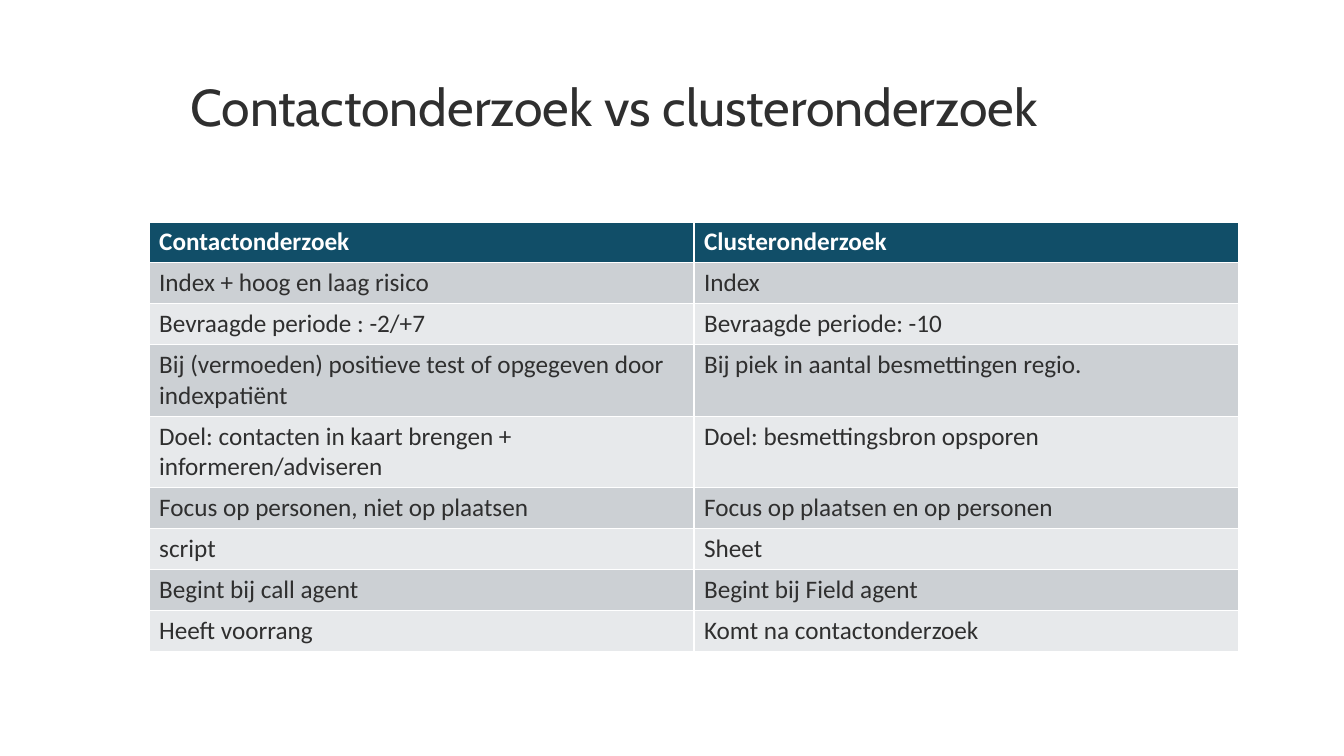
import pptx
import pptx.dml.color
import pptx.enum.text
import pptx.util

Pt = pptx.util.Pt

COLORS = {
    "text": "2F2F2F",
    "header": "114E68",
    "header text": "FFFFFF",
    "odd row": "CCD0D4",
    "even row": "E7E9EB",
}
TITLE = "Contactonderzoek vs clusteronderzoek"
COMPARISON = [
    ("Contactonderzoek", "Clusteronderzoek"),
    ("Index + hoog en laag risico", "Index"),
    ("Bevraagde periode : -2/+7", "Bevraagde periode: -10"),
    ("Bij (vermoeden) positieve test of opgegeven door indexpatiënt",
     "Bij piek in aantal besmettingen regio."),
    ("Doel: contacten in kaart brengen + informeren/adviseren",
     "Doel: besmettingsbron opsporen"),
    ("Focus op personen, niet op plaatsen", "Focus op plaatsen en op personen"),
    ("script", "Sheet"),
    ("Begint bij call agent", "Begint bij Field agent"),
    ("Heeft voorrang", "Komt na contactonderzoek"),
]
ROW_HEIGHT = 29.2


def rgb(name):
    return pptx.dml.color.RGBColor.from_string(COLORS[name])


def format_font(font, color, **values):
    for name, value in values.items():
        setattr(font, name, value)
    font.color.rgb = rgb(color)


def place_title(slide, left, top, width, height):
    title = slide.shapes.title
    box = {"left": left, "top": top, "width": width, "height": height}
    for name, value in box.items():
        setattr(title, name, Pt(value))
    frame = title.text_frame
    frame.text = TITLE
    frame_format = {
        "margin_left": 0, "margin_top": 0, "margin_right": 0, "margin_bottom": 0,
        "word_wrap": True,
        "auto_size": pptx.enum.text.MSO_AUTO_SIZE.NONE,
        "vertical_anchor": pptx.enum.text.MSO_ANCHOR.TOP,
    }
    for name, value in frame_format.items():
        setattr(frame, name, value)
    paragraph = frame.paragraphs[0]
    paragraph.alignment = pptx.enum.text.PP_ALIGN.LEFT
    paragraph.line_spacing = Pt(38)
    format_font(paragraph.runs[0].font, "text", name="Cabin", size=Pt(37), bold=False)


def place_comparison(slide, left, top, width):
    """Add the table; its default style supplies the white cell borders."""
    table = slide.shapes.add_table(
        len(COMPARISON), len(COMPARISON[0]), Pt(left), Pt(top), Pt(width),
        Pt(ROW_HEIGHT * len(COMPARISON))).table
    for row_index, texts in enumerate(COMPARISON):
        is_header = row_index == 0
        fill = "header" if is_header else "odd row" if row_index % 2 else "even row"
        color = "header text" if is_header else "text"
        for column_index, text in enumerate(texts):
            cell = table.cell(row_index, column_index)
            cell.text = text
            cell.fill.solid()
            cell.fill.fore_color.rgb = rgb(fill)
            format_font(cell.text_frame.paragraphs[0].runs[0].font, color,
                        name="Calibri", size=Pt(18), bold=is_header)


def main():
    presentation = pptx.Presentation()
    presentation.slide_width = Pt(960)
    presentation.slide_height = Pt(540)
    slide = presentation.slides.add_slide(
        presentation.slide_layouts.get_by_name("Title Only"))
    place_title(slide, 136, 60, 778, 88)
    place_comparison(slide, 106.5, 158.5, 778.5)
    presentation.save("out.pptx")


if __name__ == "__main__":
    main()
